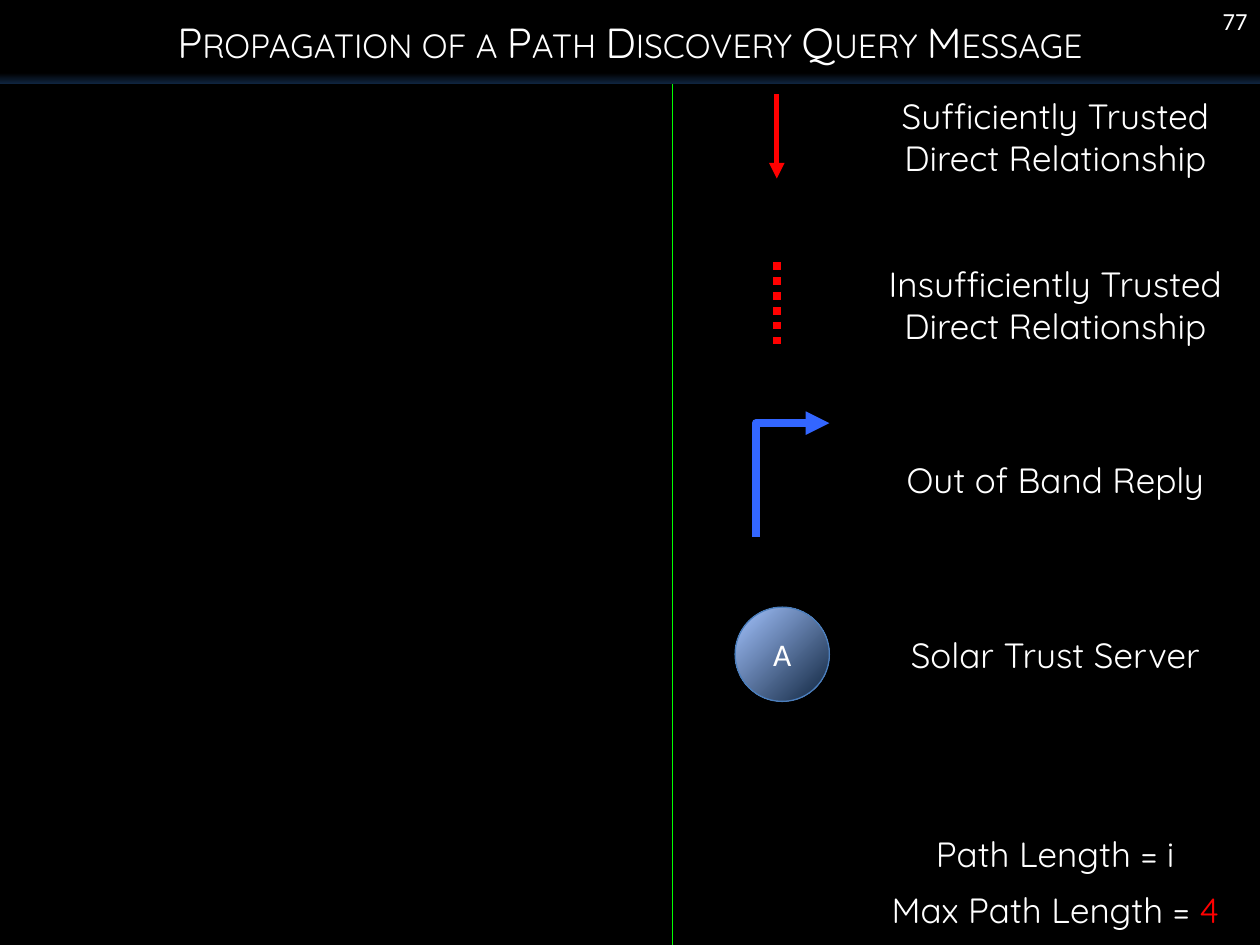
from lxml import etree
from pptx import Presentation
from pptx import util as u
from pptx.dml import color
from pptx.enum import dml, shapes, text
from pptx.oxml import ns

COLORS = {
    "black": "000000",
    "white": "FFFFFF",
    "navy": "0F243E",
    "divider": "00FF00",
    "trust": "FF0000",
    "reply": "3366FF",
    "server": "A4C4FF",
    "server edge": "4B7EBC",
}
HEAD_FONT, NUMBER_FONT = "Quicksand", "Calibri"
WIDTH, HEIGHT = 25.4, 19.05
HEADER_HEIGHT = 1.69
LABEL_LEFT, LABEL_WIDTH = 17.15, 8.25
TRUST_X, TRUST_LENGTH = 15.66, 1.7
REPLY_ROUTE = [(15.24, 10.82), (15.24, 8.53), (16.72, 8.53)]
LEGEND = [
    ("Sufficiently Trusted Direct Relationship", 1.78, 1.96),
    ("Insufficiently Trusted Direct Relationship", 5.16, 1.96),
    ("Out of Band Reply", 9.12, 1.12),
    ("Solar Trust Server", 12.65, 1.12),
    ("Path Length = i", 16.66, 1.12),
]


def rgb(name):
    return color.RGBColor.from_string(COLORS[name])


def style_runs(paragraph, size, font, align=text.PP_ALIGN.CENTER):
    paragraph.alignment = align
    for run in paragraph.runs:
        run.font.size = u.Pt(size)
        run.font.name = font
        run.font.color.rgb = rgb("white")


def style_line(line, name, width, arrow=False):
    line.color.rgb = rgb(name)
    line.width = u.Pt(width)
    if arrow:
        etree.SubElement(line._get_or_add_ln(), ns.qn("a:tailEnd"), type="triangle")


def add_line(slide, start, end, name, width, arrow=False):
    line = slide.shapes.add_connector(
        shapes.MSO_CONNECTOR.STRAIGHT, *(u.Cm(v) for v in (*start, *end)))
    style_line(line.line, name, width, arrow)
    etree.SubElement(line._element.spPr, ns.qn("a:effectLst"))
    return line


def add_label(slide, wording, box, size=20, font=HEAD_FONT,
              align=text.PP_ALIGN.CENTER):
    label = slide.shapes.add_textbox(*(u.Cm(v) for v in box))
    label.text_frame.word_wrap = True
    paragraph = label.text_frame.paragraphs[0]
    paragraph.text = wording
    style_runs(paragraph, size, font, align)
    return paragraph


def add_gradient_shape(slide, kind, box, stops, wording, size, font):
    shape = slide.shapes.add_shape(kind, *(u.Cm(v) for v in box))
    shape.shadow.inherit = False
    shape.fill.gradient()
    for stop, (position, name) in zip(shape.fill.gradient_stops, stops):
        stop.position = position
        stop.color.rgb = rgb(name)
    shape.text_frame.text = wording
    shape.text_frame.vertical_anchor = text.MSO_ANCHOR.MIDDLE
    style_runs(shape.text_frame.paragraphs[0], size, font)
    return shape


def add_header(slide):
    header = add_gradient_shape(
        slide, shapes.MSO_SHAPE.RECTANGLE, (0, 0, WIDTH, HEADER_HEIGHT),
        [(0.87, "black"), (1, "navy")],
        "Propagation of a Path Discovery Query Message", 24, HEAD_FONT)
    header.fill.gradient_angle = 270
    header.line.fill.background()
    title = header.text_frame.paragraphs[0].runs[0]
    title.font._element.set("cap", "small")


def add_server(slide):
    server = add_gradient_shape(
        slide, shapes.MSO_SHAPE.OVAL, (14.82, 12.24, 1.9, 1.9),
        [(0, "navy"), (1, "server")], "A", 18, NUMBER_FONT)
    style_line(server.line, "server edge", 0.75)
    gradient = server._element.spPr.find(ns.qn("a:gradFill"))
    gradient.remove(gradient.find(ns.qn("a:lin")))
    radial = etree.SubElement(gradient, ns.qn("a:path"))
    radial.set("path", "circle")
    etree.SubElement(radial, ns.qn("a:fillToRect"), l="100000", t="100000")


def add_reply_arrow(slide):
    start, *corners = [(u.Cm(x), u.Cm(y)) for x, y in REPLY_ROUTE]
    route = slide.shapes.build_freeform(*start)
    route.add_line_segments(corners, close=False)
    reply = route.convert_to_shape()
    reply.shadow.inherit = False
    reply.fill.background()
    style_line(reply.line, "reply", 4.5, arrow=True)


def add_trust_line(slide, top, width, arrow=False):
    return add_line(slide, (TRUST_X, top), (TRUST_X, top + TRUST_LENGTH),
                    "trust", width, arrow)


def main():
    deck = Presentation()
    deck.slide_width, deck.slide_height = u.Cm(WIDTH), u.Cm(HEIGHT)
    slide = deck.slides.add_slide(deck.slide_layouts[6])
    slide.background.fill.solid()
    slide.background.fill.fore_color.rgb = rgb("black")

    add_line(slide, (13.55, HEADER_HEIGHT), (13.55, HEIGHT), "divider", 0.75)
    add_header(slide)
    for wording, top, height in LEGEND:
        add_label(slide, wording, (LABEL_LEFT, top, LABEL_WIDTH, height))
    limit = add_label(slide, "Max Path Length = ",
                      (LABEL_LEFT, 17.78, LABEL_WIDTH, 1.12))
    limit.add_run().text = "4"
    style_runs(limit, 20, HEAD_FONT)
    limit.runs[-1].font.color.rgb = rgb("trust")

    add_trust_line(slide, 1.9, 3, arrow=True)
    insufficient = add_trust_line(slide, 5.29, 4.25)
    insufficient.line.dash_style = dml.MSO_LINE.ROUND_DOT
    add_reply_arrow(slide)
    add_server(slide)
    add_label(slide, "77", (23.5, 0, 1.9, 1.27), 14, NUMBER_FONT,
              text.PP_ALIGN.RIGHT)
    deck.save("out.pptx")


if __name__ == "__main__":
    main()
